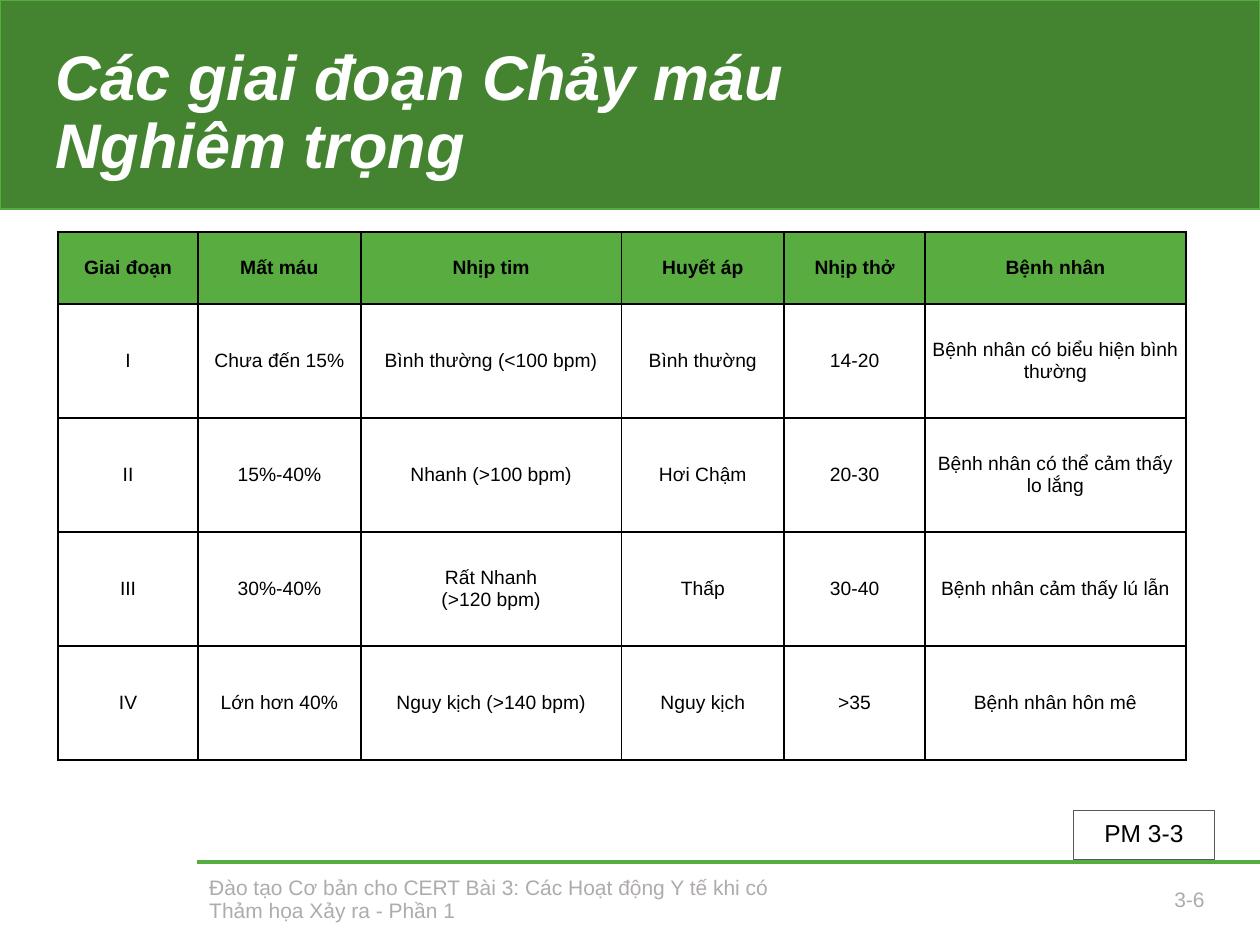
from lxml import etree
from pptx import Presentation
from pptx.dml.color import RGBColor
from pptx.enum.shapes import MSO_CONNECTOR, MSO_SHAPE
from pptx.enum.text import MSO_ANCHOR, MSO_AUTO_SIZE, PP_ALIGN
from pptx.oxml.ns import qn
from pptx.util import Pt

LEFT, CENTER, RIGHT = PP_ALIGN.LEFT, PP_ALIGN.CENTER, PP_ALIGN.RIGHT
MIDDLE = MSO_ANCHOR.MIDDLE
NO_AUTOFIT = MSO_AUTO_SIZE.NONE
RECTANGLE = MSO_SHAPE.RECTANGLE
STRAIGHT = MSO_CONNECTOR.STRAIGHT
TITLE_ONLY_LAYOUT = 5

FONT = "Arial"
BLACK, WHITE, GRAY, DARK_GRAY = "000000", "FFFFFF", "AFABAB", "575757"
BAND_GREEN, LINE_GREEN, HEADER_GREEN = "448431", "57AC40", "59AD40"

COLUMN_WIDTHS = [80, 93, 149, 93, 80.5, 149]
ROW_HEIGHTS = [41.2] + [65.15] * 4
STAGES = [
    ["Giai đoạn", "Mất máu", "Nhịp tim", "Huyết áp", "Nhịp thở", "Bệnh nhân"],
    ["I", "Chưa đến 15%", "Bình thường (<100 bpm)", "Bình thường", "14-20",
     "Bệnh nhân có biểu hiện bình thường"],
    ["II", "15%-40%", "Nhanh (>100 bpm)", "Hơi Chậm", "20-30",
     "Bệnh nhân có thể cảm thấy lo lắng"],
    ["III", "30%-40%", "Rất Nhanh\n(>120 bpm)", "Thấp", "30-40",
     "Bệnh nhân cảm thấy lú lẫn"],
    ["IV", "Lớn hơn 40%", "Nguy kịch (>140 bpm)", "Nguy kịch", ">35",
     "Bệnh nhân hôn mê"],
]


def color(hex_string):
    return RGBColor.from_string(hex_string)


def write(text_frame, text, size, text_color, alignment=LEFT, bold=False,
          italic=False, line_spacing=0.9):
    text_frame.text = text
    text_frame.word_wrap = True
    for paragraph in text_frame.paragraphs:
        paragraph.alignment = alignment
        paragraph.line_spacing = line_spacing
        font = paragraph.font
        font.name, font.size = FONT, Pt(size)
        font.bold, font.italic = bold, italic
        font.color.rgb = color(text_color)


def add_rectangle(slide, left, top, width, height, line_color, line_width):
    shape = slide.shapes.add_shape(
        RECTANGLE, Pt(left), Pt(top), Pt(width), Pt(height))
    shape.shadow.inherit = False
    shape.fill.background()
    shape.line.color.rgb = color(line_color)
    shape.line.width = Pt(line_width)
    return shape


def add_title_band(slide, left, top, width, height):
    band = add_rectangle(slide, left, top, width, height, LINE_GREEN, 1)
    band.fill.solid()
    band.fill.fore_color.rgb = color(BAND_GREEN)
    title = slide.shapes.title
    title.element.addprevious(band.element)
    title.left, title.top = Pt(left + 24.5), Pt(top + 25.2)
    title.width, title.height = Pt(457.2), Pt(80)
    write(title.text_frame, "Các giai đoạn Chảy máu Nghiêm trọng", 36, WHITE,
          bold=True, italic=True)
    title.text_frame.vertical_anchor = MIDDLE
    title.text_frame.auto_size = NO_AUTOFIT


def set_borders(cell, line_color, width):
    properties = cell._tc.get_or_add_tcPr()
    for index, side in enumerate(("a:lnL", "a:lnR", "a:lnT", "a:lnB")):
        line = etree.Element(qn(side), w=str(Pt(width)))
        fill = etree.SubElement(line, qn("a:solidFill"))
        etree.SubElement(fill, qn("a:srgbClr"), val=line_color)
        properties.insert(index, line)


def add_stage_table(slide, left, top):
    table = slide.shapes.add_table(
        len(ROW_HEIGHTS), len(COLUMN_WIDTHS), Pt(left), Pt(top),
        Pt(sum(COLUMN_WIDTHS)), Pt(sum(ROW_HEIGHTS))).table
    for column, width in zip(table.columns, COLUMN_WIDTHS):
        column.width = Pt(width)
    for row_index, (row, height) in enumerate(zip(table.rows, ROW_HEIGHTS)):
        row.height = Pt(height)
        is_header = row_index == 0
        for cell, text in zip(row.cells, STAGES[row_index]):
            cell.margin_left = cell.margin_right = Pt(3)
            cell.margin_top = cell.margin_bottom = 0
            cell.vertical_anchor = MIDDLE
            write(cell.text_frame, text, 11, BLACK, CENTER, bold=is_header,
                  line_spacing=1)
            if is_header:
                cell.fill.solid()
                cell.fill.fore_color.rgb = color(HEADER_GREEN)
            else:
                cell.fill.background()
            set_borders(cell, BLACK, 1)


def add_page_reference(slide, left, top, width, height):
    box = add_rectangle(slide, left, top, width, height, DARK_GRAY, 0.75)
    write(box.text_frame, "PM 3-3", 14, BLACK, CENTER)
    box.text_frame.vertical_anchor = MIDDLE


def add_footer_text(slide, left, top, width, height, text, alignment):
    box = slide.shapes.add_textbox(Pt(left), Pt(top), Pt(width), Pt(height))
    write(box.text_frame, text, 12, GRAY, alignment)
    box.text_frame.vertical_anchor = MIDDLE
    box.text_frame.auto_size = NO_AUTOFIT


def add_footer(slide, left, top, right):
    rule = slide.shapes.add_connector(
        STRAIGHT, Pt(left), Pt(top), Pt(right), Pt(top))
    rule.line.color.rgb = color(LINE_GREEN)
    rule.line.width = Pt(2.04)
    etree.SubElement(rule.element.spPr, qn("a:effectLst"))
    text_top, text_height = top + 10, 24
    add_footer_text(
        slide, left, text_top, 363, text_height,
        "Đào tạo Cơ bản cho CERT Bài 3: Các Hoạt động Y tế khi có "
        "Thảm họa Xảy ra - Phần 1", LEFT)
    add_footer_text(slide, right - 166.3, text_top, 141.8, text_height,
                    "3-6", RIGHT)


def main():
    presentation = Presentation()
    presentation.slide_width, presentation.slide_height = Pt(720), Pt(540)
    slide = presentation.slides.add_slide(
        presentation.slide_layouts[TITLE_ONLY_LAYOUT])
    add_title_band(slide, 0, 0, 720, 119.5)
    add_footer(slide, 112.5, 492.5, 720)
    add_page_reference(slide, 613.4, 463, 80.6, 28)
    add_stage_table(slide, 33.2, 132.5)
    presentation.save("out.pptx")


if __name__ == "__main__":
    main()
